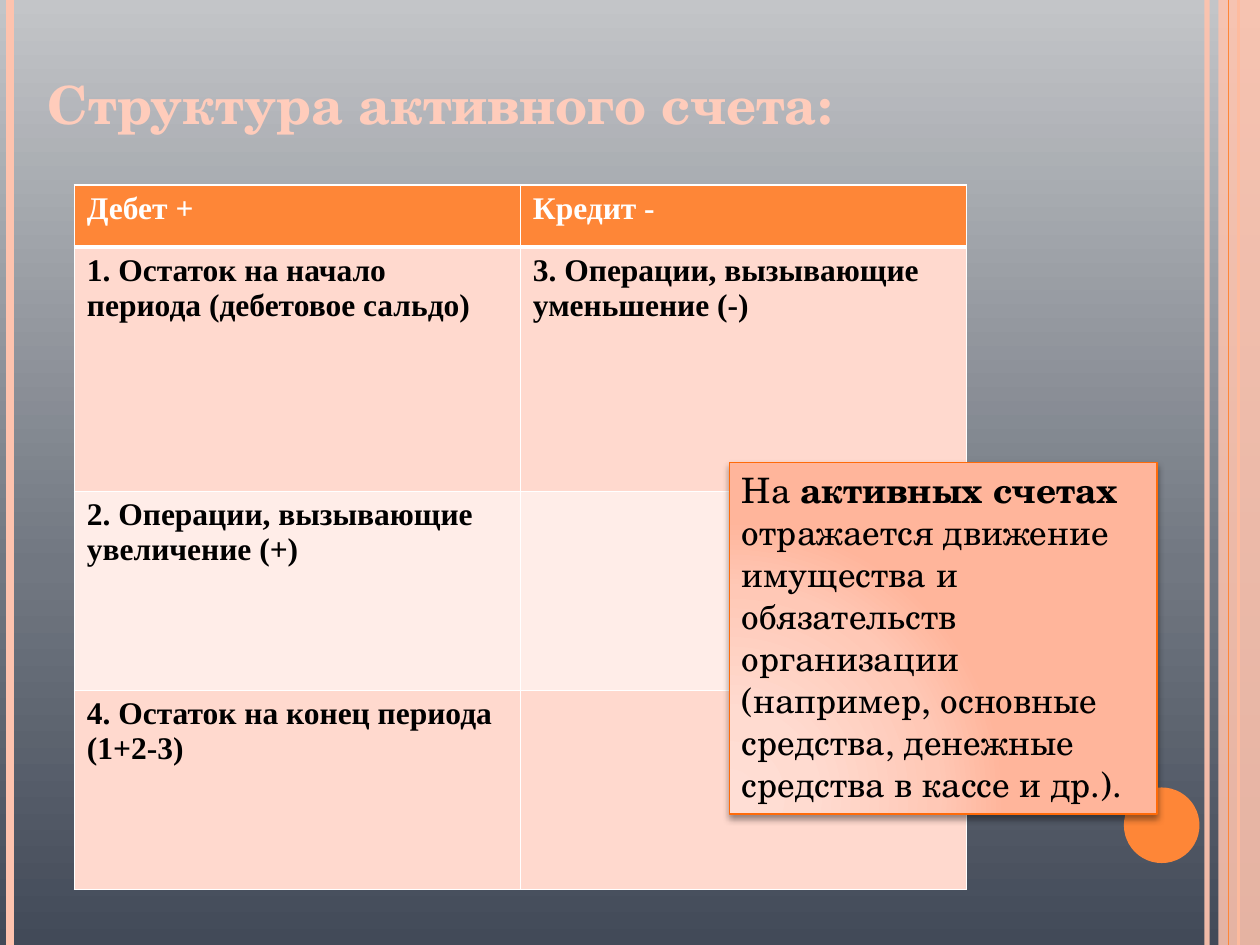
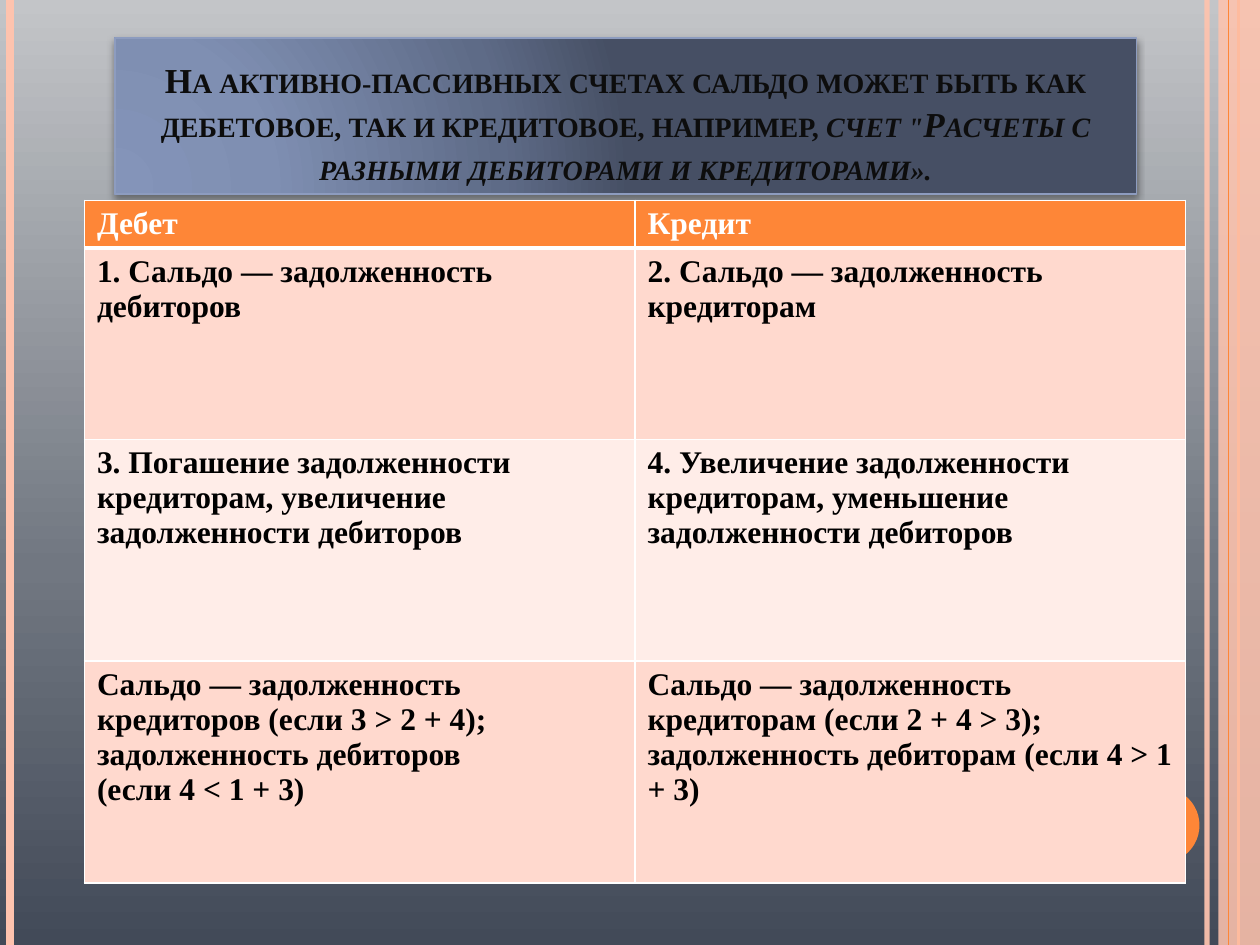
from dataclasses import dataclass

from lxml.etree import SubElement
from pptx import Presentation
from pptx.dml.color import RGBColor
from pptx.enum.shapes import MSO_CONNECTOR, MSO_SHAPE
from pptx.enum.text import MSO_ANCHOR, MSO_AUTO_SIZE, PP_ALIGN
from pptx.oxml.ns import qn
from pptx.util import Emu, Pt

PX = 9144  # EMU per px, 100 px to the inch
rgb = RGBColor.from_string


@dataclass(frozen=True)
class Theme:
    serif: str = "Times New Roman"
    display: str = "TeX Gyre Schola"
    orange: str = "FE8637"
    peach: str = "FEC3AE"
    title: str = "FFCCBB"
    ink: str = "000000"
    dark: str = "0D0D0D"
    white: str = "FFFFFF"
    bands: tuple = ("FFD9CE", "FFEDE8")
    callout_line: str = "FF6B0A"
    panel_line: str = "8D9CBF"
    back: tuple = ((0, "424A58"), (40, "717781"), (100, "C3C5C8"))
    callout: tuple = ((0, "FFDED5"), (30, "FFDBD0"), (75, "FFC8B6"), (100, "FFB59B"))
    panel: tuple = ((0, "8494B9"), (30, "7F8FB2"), (75, "5E6B87"), (100, "464F64"))
    title_size: int = 30
    text_size: int = 20
    table_size: int = 18


T = Theme()


def set_gradient(root, stops, angle=None):
    """Fill the gradient found in root: linear with an angle, else circular."""
    grad = next(root.iter(qn("a:gradFill")))
    for child in list(grad):
        grad.remove(child)
    gs_list = SubElement(grad, qn("a:gsLst"))
    for pos, color in stops:
        gs = SubElement(gs_list, qn("a:gs"), pos=str(pos * 1000))
        SubElement(gs, qn("a:srgbClr"), val=color)
    if angle is not None:
        SubElement(grad, qn("a:lin"), ang=str(angle * 60000), scaled="0")
    else:
        circle = SubElement(grad, qn("a:path"), path="circle")
        SubElement(circle, qn("a:fillToRect"), l="5000", t="100000", r="120000", b="10000")


def style_panel(s, stops, line):
    """Give a shape a circular gradient, a thin line and a soft shadow."""
    s.fill.gradient()
    set_gradient(s._element.spPr, stops)
    s.line.color.rgb, s.line.width = rgb(line), Pt(1)
    s.shadow.inherit = False
    shadow = SubElement(s._element.spPr.find(qn("a:effectLst")), qn("a:outerShdw"),
                        blurRad=str(Pt(4)), dist=str(Pt(2)), dir="5400000", rotWithShape="0")
    SubElement(SubElement(shadow, qn("a:srgbClr"), val=T.ink), qn("a:alpha"), val="40000")


prs = Presentation()
prs.slide_width, prs.slide_height = Emu(1000 * PX), Emu(750 * PX)

# Shared background
prs.slide_master.background.fill.gradient()
set_gradient(prs.slide_master.element.cSld, T.back, 270)

# Shared vertical bands: x, colour, line width in pt (None for the wide band), opacity
BANDS = [
    (958, T.peach, 3, 93),
    (8, T.peach, 4.5, 100),
    (983, T.orange, 1.5, 100),
    (967, T.peach, None, 87),
    (975, T.orange, 0.75, 100),
]

# Slide contents: title place, table place, column width, row heights, rows
SLIDES = [
    dict(title=(28, 30, 929, 82), table=(59, 147), col=354, heights=(49, 194, 158, 158), rows=[
        ("Дебет +", "Кредит -"),
        ("1. Остаток на начало периода (дебетовое сальдо)",
         "3. Операции, вызывающие уменьшение (-)"),
        ("2. Операции, вызывающие увеличение (+)", ""),
        ("4. Остаток на конец периода (1+2-3)", ""),
    ]),
    dict(title=(91, 30, 811, 124), table=(67, 159), col=437, heights=(37, 152, 176, 176), rows=[
        ("Дебет", "Кредит"),
        ("1. Сальдо — задолженность дебиторов", "2. Сальдо — задолженность кредиторам"),
        ("3. Погашение задолженности кредиторам, увеличение задолженности дебиторов",
         "4. Увеличение задолженности кредиторам, уменьшение задолженности дебиторов"),
        ("Сальдо — задолженность кредиторов (если 3 > 2 + 4); задолженность дебиторов\n"
         "(если 4 < 1 + 3)",
         "Сальдо — задолженность кредиторам (если 2 + 4 > 3); "
         "задолженность дебиторам (если 4 > 1 + 3)"),
    ]),
]

for content in SLIDES:
    slide = prs.slides.add_slide(prs.slide_layouts[5])

    # Vertical bands and the disc
    for x, color, width, opacity in BANDS:
        if width is None:
            s = slide.shapes.add_shape(MSO_SHAPE.RECTANGLE, x * PX, 0, 33 * PX, 750 * PX)
            s.fill.solid()
            s.fill.fore_color.rgb = rgb(color)
            s.line.fill.background()
            s.shadow.inherit = False
        else:
            s = slide.shapes.add_connector(MSO_CONNECTOR.STRAIGHT, x * PX, 0, x * PX, 750 * PX)
            s.line.color.rgb, s.line.width = rgb(color), Pt(width)
            SubElement(s._element.spPr, qn("a:effectLst"))
        if opacity < 100:
            clr = next(s._element.spPr.iter(qn("a:srgbClr")))
            SubElement(clr, qn("a:alpha"), val=str(opacity * 1000))
    s = slide.shapes.add_shape(MSO_SHAPE.OVAL, 892 * PX, 625 * PX, 60 * PX, 60 * PX)
    s.fill.solid()
    s.fill.fore_color.rgb = rgb(T.orange)
    s.line.fill.background()
    s.shadow.inherit = False

    # Title placeholder
    s = slide.shapes.title
    s.left, s.top, s.width, s.height = (Emu(v * PX) for v in content["title"])
    s.text_frame.vertical_anchor = MSO_ANCHOR.BOTTOM
    s.text_frame.auto_size = MSO_AUTO_SIZE.NONE
    s.text_frame.paragraphs[0].font.bold = True

    # Table with white borders, heavier under the header
    rows, heights = content["rows"], content["heights"]
    x, y = content["table"]
    table = slide.shapes.add_table(len(rows), 2, x * PX, y * PX, 2 * content["col"] * PX,
                                   sum(heights) * PX).table
    for col in table.columns:
        col.width = Emu(content["col"] * PX)
    for i, (texts, height) in enumerate(zip(rows, heights)):
        table.rows[i].height = Emu(height * PX)
        for cell, text in zip(table.rows[i].cells, texts):
            cell.text = text
            cell.fill.solid()
            cell.fill.fore_color.rgb = rgb(T.bands[(i - 1) % 2] if i else T.orange)
            for p in cell.text_frame.paragraphs:
                p.font.name, p.font.size, p.font.bold = T.serif, Pt(T.table_size), True
                p.font.color.rgb = rgb(T.ink if i else T.white)
            tc_pr = cell._tc.get_or_add_tcPr()
            for n, side in enumerate("LRTB"):
                heavy = (i, side) in ((0, "B"), (1, "T"))
                ln = SubElement(tc_pr, qn(f"a:ln{side}"), w=str(Pt(3 if heavy else 1)))
                SubElement(SubElement(ln, qn("a:solidFill")), qn("a:srgbClr"), val=T.white)
                tc_pr.insert(n, ln)

active, mixed = prs.slides

# Slide 1: title text
p = active.shapes.title.text_frame.paragraphs[0]
p.text = "Структура активного счета:"
p.alignment = PP_ALIGN.LEFT
p.font.name, p.font.size = T.display, Pt(T.title_size)
p.font.color.rgb = rgb(T.title)

# Slide 1: callout over the table
s = active.shapes.add_shape(MSO_SHAPE.RECTANGLE, 579 * PX, 367 * PX, 339 * PX, 279 * PX)
style_panel(s, T.callout, T.callout_line)
tf = s.text_frame
tf.word_wrap = True
tf.vertical_anchor = MSO_ANCHOR.TOP
p = tf.paragraphs[0]
p.alignment = PP_ALIGN.LEFT
p.font.name, p.font.size = T.display, Pt(T.text_size)
p.font.color.rgb = rgb(T.ink)
for text, bold in [
    ("На ", False),
    ("активных счетах", True),
    (" отражается движение имущества и обязательств организации "
     "(например, основные средства, денежные средства в кассе и др.).", False),
]:
    r = p.add_run()
    r.text, r.font.bold = text, bold

# Slide 2: title on a panel, in small capitals
s = mixed.shapes.title
style_panel(s, T.panel, T.panel_line)
p = s.text_frame.paragraphs[0]
p.alignment = PP_ALIGN.CENTER
p.line_spacing = 1.04
p.font.name, p.font.size = T.serif, Pt(T.text_size)
p.font.color.rgb = rgb(T.dark)
for text, italic in [
    ("На активно-пассивных счетах сальдо может быть как дебетовое, "
     "так и кредитовое, например, ", False),
    ("счет \"Расчеты с разными дебиторами и кредиторами».", True),
]:
    r = p.add_run()
    r.text, r.font.italic = text, italic
    r._r.get_or_add_rPr().set("cap", "small")

prs.save("out.pptx")
